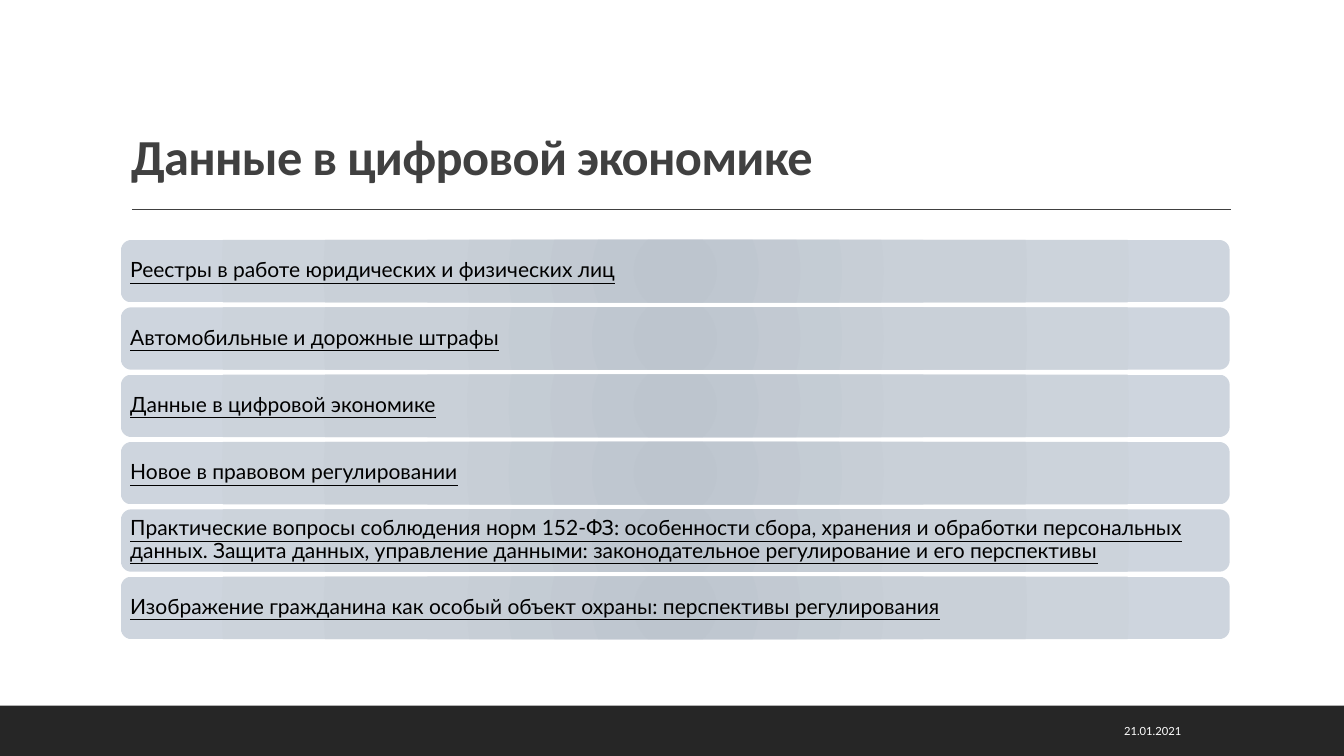
from dataclasses import dataclass
from typing import Any

from pptx import Presentation
from pptx import util as u
from pptx.dml import color
from pptx.enum import shapes, text
from pptx.oxml import parse_xml
from pptx.oxml.ns import nsdecls

Pt = u.Pt


# Colours, fonts and type sizes
@dataclass(frozen=True)
class Theme:
    dark: str = "262626"
    grey: str = "404040"
    ink: str = "000000"
    white: str = "FFFFFF"
    stops: tuple = ((0, "BDC5CE"), (45, "C9D0D8"), (100, "CED5DE"))
    head: str = "Calibri"
    body: str = "Lato"
    big: float = 36
    mid: float = 15
    small: float = 8


@dataclass(frozen=True)
class Box:
    left: float
    top: float
    width: float
    height: float

    def pts(self) -> tuple:
        return tuple(Pt(v) for v in (self.left, self.top, self.width, self.height))


@dataclass(frozen=True)
class Topic:
    label: str
    box: Box


THEME = Theme()
LEFT, WIDTH = 86.4, 792
TOP, PITCH, TALL = 171.4, 48.1, 44.6
LABELS = (
    "Реестры в работе юридических и физических лиц",
    "Автомобильные и дорожные штрафы",
    "Данные в цифровой экономике",
    "Новое в правовом регулировании",
    "Практические вопросы соблюдения норм 152-ФЗ: особенности сбора, "
    "хранения и обработки персональных данных. Защита данных, управление "
    "данными: законодательное регулирование и его перспективы",
    "Изображение гражданина как особый объект охраны: перспективы регулирования",
)
TOPICS = [Topic(label, Box(LEFT, TOP + i * PITCH, WIDTH, TALL))
          for i, label in enumerate(LABELS)]


def rgb(code: str) -> color.RGBColor:
    return color.RGBColor.from_string(code)


def apply(item: Any, values: dict) -> None:
    for name, value in values.items():
        setattr(item, name, value)


def write(shape: Any, label: str, ink: str, frame: dict, para: dict, font: dict) -> Any:
    """Fill a shape with one formatted run."""
    body = shape.text_frame
    apply(body, {"word_wrap": True, "auto_size": text.MSO_AUTO_SIZE.NONE, **frame})
    line = body.paragraphs[0]
    apply(line, para)
    run = line.add_run()
    run.text = label
    apply(run.font, font)
    run.font.color.rgb = rgb(ink)
    return run


def add_block(slide: Any, kind: Any, box: Box) -> Any:
    block = slide.shapes.add_shape(kind, *box.pts())
    block.shadow.inherit = False
    block.line.fill.background()
    return block


def shade(shape: Any) -> None:
    """Give a shape the circular gradient."""
    stops = "".join(f'<a:gs pos="{pos * 1000}"><a:srgbClr val="{code}"/></a:gs>'
                    for pos, code in THEME.stops)
    grad = parse_xml(
        f'<a:gradFill {nsdecls("a")} rotWithShape="1"><a:gsLst>{stops}</a:gsLst>'
        '<a:path path="circle"><a:fillToRect l="100000" t="100000" '
        'r="100000" b="100000"/></a:path></a:gradFill>')
    shape.fill.gradient()
    props = shape.element.spPr
    old = props.find(grad.tag)
    props.replace(old, grad)


def add_topic(slide: Any, topic: Topic) -> None:
    bar = add_block(slide, shapes.MSO_SHAPE.ROUNDED_RECTANGLE, topic.box)
    shade(bar)
    write(bar, topic.label, THEME.ink,
          {"vertical_anchor": text.MSO_ANCHOR.MIDDLE, "margin_left": Pt(4.5),
           "margin_right": Pt(4.5), "margin_top": 0, "margin_bottom": 0},
          {"alignment": text.PP_ALIGN.LEFT, "line_spacing": 0.9},
          {"name": THEME.body, "size": Pt(THEME.mid), "underline": True})


def add_title(slide: Any) -> None:
    title = slide.shapes.title
    apply(title, dict(zip(("left", "top", "width", "height"),
                          Box(LEFT, 22.6, WIDTH, 114.2).pts())))
    run = write(title, "Данные в цифровой экономике", THEME.grey,
                {"vertical_anchor": text.MSO_ANCHOR.BOTTOM},
                {"alignment": text.PP_ALIGN.LEFT, "line_spacing": 0.9},
                {"name": THEME.head, "size": Pt(THEME.big), "bold": True})
    run.font._element.set("spc", "-50")


def add_rule(slide: Any) -> None:
    rule = slide.shapes.add_connector(shapes.MSO_CONNECTOR.STRAIGHT,
                                      Pt(94.3), Pt(149.6), Pt(879), Pt(149.6))
    rule.line.color.rgb = rgb(THEME.grey)
    rule.line.width = Pt(1)
    rule.element.spPr.append(parse_xml(f'<a:effectLst {nsdecls("a")}/>'))


def add_foot(slide: Any) -> None:
    foot = add_block(slide, shapes.MSO_SHAPE.RECTANGLE, Box(0, 504, 960, 36))
    foot.fill.solid()
    foot.fill.fore_color.rgb = rgb(THEME.dark)


def add_date(slide: Any) -> None:
    date = slide.shapes.add_textbox(*Box(647.3, 507.6, 203.8, 28.8).pts())
    write(date, "21.01.2021", THEME.white,
          {"vertical_anchor": text.MSO_ANCHOR.MIDDLE},
          {"alignment": text.PP_ALIGN.RIGHT},
          {"name": THEME.body, "size": Pt(THEME.small)})


def main() -> None:
    deck = Presentation()
    apply(deck, {"slide_width": Pt(960), "slide_height": Pt(540)})
    slide = deck.slides.add_slide(deck.slide_layouts[5])
    # Frame of the slide
    add_foot(slide)
    add_rule(slide)
    add_title(slide)
    # List of topics
    for topic in TOPICS:
        add_topic(slide, topic)
    add_date(slide)
    deck.save("out.pptx")


if __name__ == "__main__":
    main()
